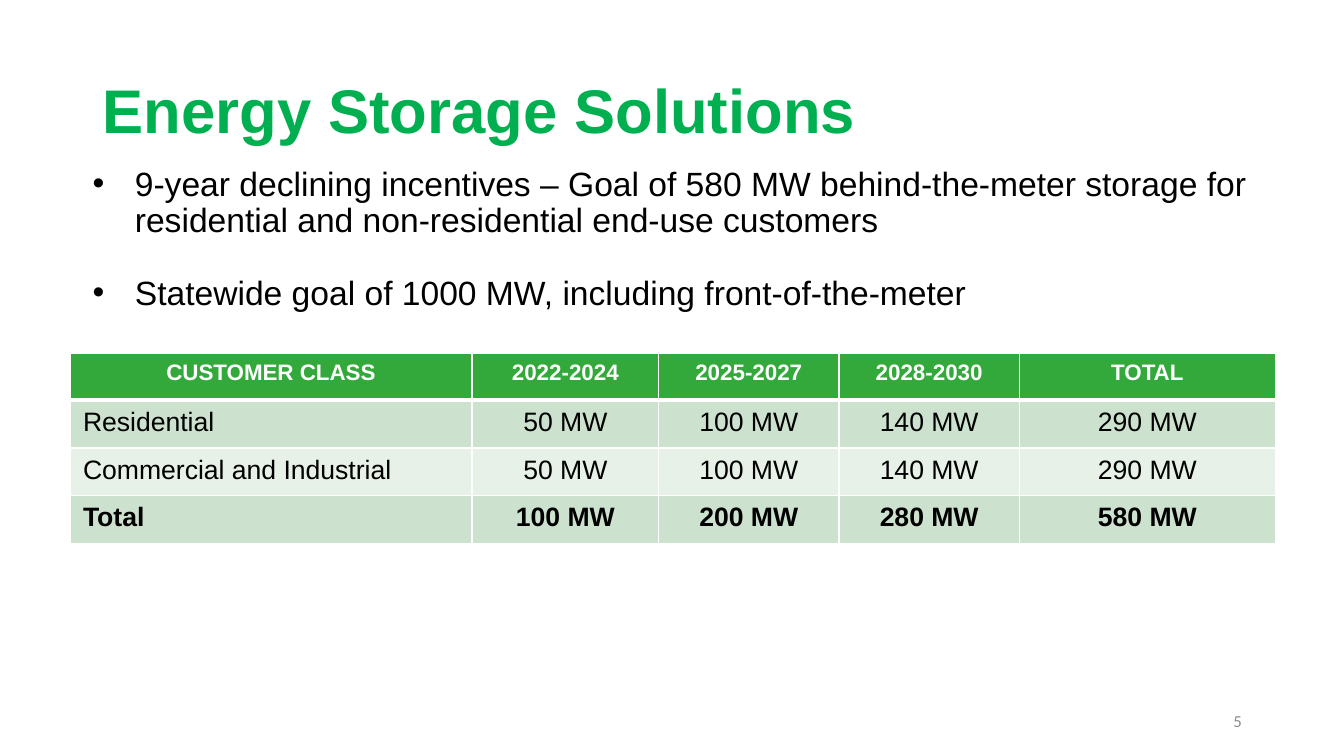
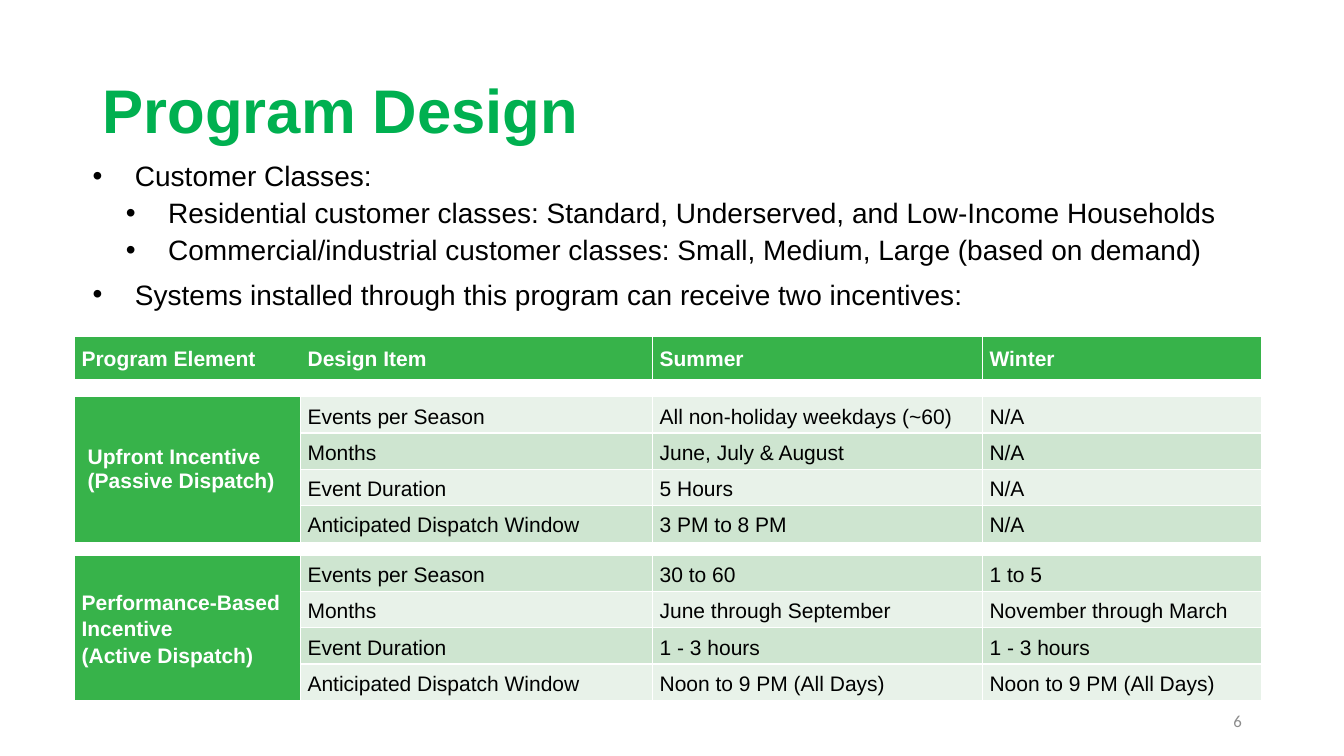
from dataclasses import dataclass
from typing import Any

from lxml.etree import SubElement
from pptx import Presentation
from pptx.dml.color import RGBColor
from pptx.enum.text import MSO_ANCHOR, PP_ALIGN
from pptx.oxml.ns import qn
from pptx.util import Inches, Pt

# Shared look
WIDTH, HEIGHT = Inches(13.33), Inches(7.5)
BLACK, WHITE, GRAY, TITLE_GREEN = "000000", "FFFFFF", "8C8C8C", "00B050"
HEADER_GREEN, BAND_DARK, BAND_LIGHT = "32A93A", "CDE2CE", "E8F1E8"
DESIGN_GREEN, DESIGN_DARK, DESIGN_LIGHT = "37B34A", "CEE5D0", "E8F2E9"
LEFT, CENTER, RIGHT = PP_ALIGN.LEFT, PP_ALIGN.CENTER, PP_ALIGN.RIGHT
TOP, MIDDLE = MSO_ANCHOR.TOP, MSO_ANCHOR.MIDDLE
WIDE_INSETS, TIGHT_INSETS, NO_INSETS = (0.13, 0.07), (0.07, 0), (0, 0)
THIN, THICK = 1.1, 3.31
BULLET_HANG = 0.42
LEVEL_INDENT = (0.42, 0.75)
LEVEL_SPACE = (10, 5)


@dataclass(frozen=True)
class Area:
    """A rectangle in percent of the slide's width and height."""
    left: float
    top: float
    width: float
    height: float

    def lengths(self) -> tuple[int, int, int, int]:
        return (int(WIDTH * self.left / 100), int(HEIGHT * self.top / 100),
                int(WIDTH * self.width / 100), int(HEIGHT * self.height / 100))


@dataclass(frozen=True)
class Bullet:
    text: str
    level: int = 0


@dataclass(frozen=True)
class Incentive:
    name: str
    insets: tuple[float, float]
    line_spacing: float
    bands: tuple[str, str]
    items: tuple[tuple[str, str, str], ...]


TITLE_AREA = Area(6.9, 5.33, 86.25, 19.33)
NUMBER_AREA = Area(70.65, 92.67, 22.5, 5.33)

GOALS = (
    Bullet("9-year declining incentives – Goal of 580 MW behind-the-meter storage "
           "for residential and non-residential end-use customers"),
    Bullet("Statewide goal of 1000 MW, including front-of-the-meter"),
)
CAPACITY_COLUMNS = (399, 185, 179, 179, 254)
CAPACITY = (
    ("CUSTOMER CLASS", "2022-2024", "2025-2027", "2028-2030", "TOTAL"),
    ("Residential", "50 MW", "100 MW", "140 MW", "290 MW"),
    ("Commercial and Industrial", "50 MW", "100 MW", "140 MW", "290 MW"),
    ("Total", "100 MW", "200 MW", "280 MW", "580 MW"),
)

CLASSES = (
    Bullet("Customer Classes:"),
    Bullet("Residential customer classes: Standard, Underserved, and Low-Income Households", 1),
    Bullet("Commercial/industrial customer classes: Small, Medium, Large (based on demand)", 1),
    Bullet("Systems installed through this program can receive two incentives:"),
)
DESIGN_COLUMNS = (224, 349, 327, 277)
DESIGN_ROWS = (42, 18, *(36,) * 4, 14, *(36,) * 4)
DESIGN_HEADER = ("Program Element", "Design Item", "Summer", "Winter")
DESIGN_BORDERS = ("", "TR", "LTR", "LTR")
INCENTIVES = (
    Incentive("Upfront Incentive\n(Passive Dispatch)", WIDE_INSETS, 1,
              (DESIGN_LIGHT, DESIGN_DARK), (
                  ("Events per Season", "All non-holiday weekdays (~60)", "N/A"),
                  ("Months", "June, July & August", "N/A"),
                  ("Event Duration", "5 Hours", "N/A"),
                  ("Anticipated Dispatch Window", "3 PM to 8 PM", "N/A"))),
    Incentive("Performance-Based Incentive\n(Active Dispatch)", TIGHT_INSETS, 1.15,
              (DESIGN_DARK, DESIGN_LIGHT), (
                  ("Events per Season", "30 to 60", "1 to 5"),
                  ("Months", "June through September", "November through March"),
                  ("Event Duration", "1 - 3 hours", "1 - 3 hours"),
                  ("Anticipated Dispatch Window", "Noon to 9 PM (All Days)",
                   "Noon to 9 PM (All Days)"))),
)


def rgb(value: str) -> RGBColor:
    return RGBColor.from_string(value)


def write(frame: Any, text: str, *, size: float, color: str = BLACK, bold: bool = False,
          font: str = "Arial", align: PP_ALIGN = LEFT, line_spacing: float = 1,
          before: float = 0, after: float = 0, level: int | None = None) -> None:
    """Write one paragraph per line; a level makes it a bullet."""
    for line in text.split("\n"):
        para = frame.paragraphs[-1]
        if para.runs:
            para = frame.add_paragraph()
        para.alignment, para.line_spacing = align, line_spacing
        para.space_before, para.space_after = Pt(before), Pt(after)
        if level is not None:
            properties = para._p.get_or_add_pPr()
            properties.set("lvl", str(level))
            properties.set("marL", str(Inches(LEVEL_INDENT[level])))
            properties.set("indent", str(-Inches(BULLET_HANG)))
            SubElement(properties, qn("a:buFont"), typeface="Arial")
            SubElement(properties, qn("a:buChar"), char="•")
        if not line:
            SubElement(para._p, qn("a:endParaRPr"), sz=str(int(size * 100)))
            continue
        span = para.add_run()
        span.text = line
        span.font.size, span.font.name, span.font.bold = Pt(size), font, bold
        span.font.color.rgb = rgb(color)


def add_box(page: Any, area: Area, anchor: MSO_ANCHOR = TOP) -> Any:
    frame = page.shapes.add_textbox(*area.lengths()).text_frame
    frame.word_wrap = True
    frame.vertical_anchor = anchor
    return frame


def add_page(deck: Any, title: str, number: int) -> Any:
    page = deck.slides.add_slide(deck.slide_layouts[6])
    write(add_box(page, TITLE_AREA, MIDDLE), title, size=44, color=TITLE_GREEN,
          bold=True, line_spacing=0.9)
    write(add_box(page, NUMBER_AREA, MIDDLE), str(number), size=12, color=GRAY,
          font="Calibri", align=RIGHT)
    return page


def add_bullets(page: Any, area: Area, bullets: tuple[Bullet, ...], size: float,
                after: float = 0) -> None:
    frame = add_box(page, area)
    for bullet in bullets:
        write(frame, bullet.text, size=size, line_spacing=0.9, after=after,
              before=LEVEL_SPACE[bullet.level], level=bullet.level)


def add_grid(page: Any, area: Area, columns: tuple[int, ...], rows: tuple[int, ...]) -> Any:
    """Add a table whose columns and rows share the area by weight."""
    left, top, width, height = area.lengths()
    table = page.shapes.add_table(len(rows), len(columns), left, top, width, height).table
    table.first_row = table.horz_banding = False
    for column, weight in zip(table.columns, columns):
        column.width = int(width * weight / sum(columns))
    for row, weight in zip(table.rows, rows):
        row.height = int(height * weight / sum(rows))
    return table


def fill_cell(cell: Any, text: str, fill: str, *, insets: tuple[float, float],
              anchor: MSO_ANCHOR = TOP, borders: str = "LRTB", line: float = 1,
              top: float | None = None, bottom: float | None = None, **text_format: Any) -> None:
    properties = cell._tc.get_or_add_tcPr()
    widths = {"T": top or line, "B": bottom or line}
    for side in "LRTB":
        edge = SubElement(properties, qn(f"a:ln{side}"), w=str(Pt(widths.get(side, line))))
        if side in borders:
            paint = SubElement(edge, qn("a:solidFill"))
            SubElement(paint, qn("a:srgbClr"), val=WHITE)
        else:
            SubElement(edge, qn("a:noFill"))
    cell.fill.solid()
    cell.fill.fore_color.rgb = rgb(fill)
    cell.margin_left = cell.margin_right = Inches(insets[0])
    cell.margin_top = cell.margin_bottom = Inches(insets[1])
    cell.vertical_anchor = anchor
    write(cell.text_frame, text, **text_format)


def add_capacity_table(page: Any) -> None:
    table = add_grid(page, Area(5.2, 46.67, 89.7, 25.2), CAPACITY_COLUMNS, (1,) * len(CAPACITY))
    fills = (HEADER_GREEN, BAND_DARK, BAND_LIGHT, BAND_DARK)
    for row, (values, fill) in enumerate(zip(CAPACITY, fills)):
        header = row == 0
        for column, value in enumerate(values):
            fill_cell(table.cell(row, column), value, fill, insets=WIDE_INSETS, line=THIN,
                      top=THICK if row == 1 else None, bottom=THICK if header else None,
                      size=16 if header else 19, color=WHITE if header else BLACK,
                      bold=header or values[0] == "Total",
                      align=CENTER if header or column else LEFT)


def add_design_table(page: Any) -> None:
    table = add_grid(page, Area(5.55, 44.53, 88.35, 48.1), DESIGN_COLUMNS, DESIGN_ROWS)
    last = len(DESIGN_COLUMNS) - 1
    heading = dict(size=15, color=WHITE, bold=True, anchor=MIDDLE)
    for column, (label, borders) in enumerate(zip(DESIGN_HEADER, DESIGN_BORDERS)):
        fill_cell(table.cell(0, column), label, DESIGN_GREEN, insets=TIGHT_INSETS,
                  borders=borders, line_spacing=1.15, **heading)
    # Each incentive is a spacer row and a block of items beside a merged name
    spacer = 1
    for incentive in INCENTIVES:
        first, count = spacer + 1, len(incentive.items)
        for column in range(last + 1):
            fill_cell(table.cell(spacer, column), "", WHITE, insets=NO_INSETS,
                      borders="", size=4)
        table.cell(spacer, 0).merge(table.cell(spacer, last))
        fill_cell(table.cell(first, 0), incentive.name, DESIGN_GREEN, insets=incentive.insets,
                  line_spacing=incentive.line_spacing, **heading)
        table.cell(first, 0).merge(table.cell(first + count - 1, 0))
        for index, item in enumerate(incentive.items):
            for column, value in enumerate(item, start=1):
                fill_cell(table.cell(first + index, column), value, incentive.bands[index % 2],
                          insets=TIGHT_INSETS, anchor=MIDDLE, size=15, line_spacing=1.15)
        spacer = first + count


def main() -> None:
    deck = Presentation()
    deck.slide_width, deck.slide_height = WIDTH, HEIGHT

    # Storage goals
    page = add_page(deck, "Energy Storage Solutions", 5)
    add_bullets(page, Area(6.15, 21.47, 90, 39.2), GOALS, size=24, after=16)
    add_capacity_table(page)

    # Incentive design
    page = add_page(deck, "Program Design", 6)
    add_bullets(page, Area(6.15, 20.8, 90, 29.2), CLASSES, size=20)
    add_design_table(page)

    deck.save("out.pptx")


if __name__ == "__main__":
    main()
